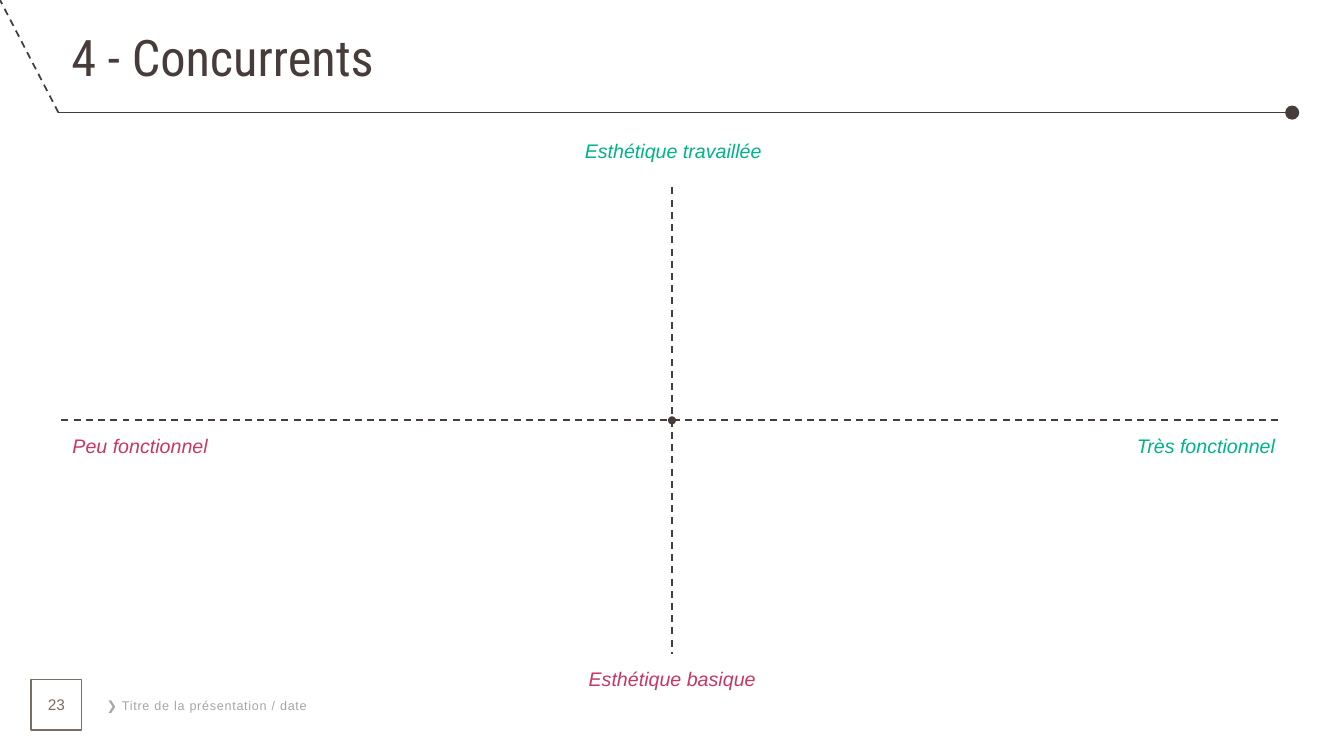
import pptx
import pptx.dml.color
import pptx.enum.dml
import pptx.enum.shapes
import pptx.enum.text
import pptx.oxml.ns
import pptx.util
from lxml import etree

WIDE, HIGH = pptx.util.Inches(13.333), pptx.util.Inches(7.5)
INK = {"dark": "463D3A", "good": "00B388", "poor": "C83764",
       "pale": "A6A6A6", "taupe": "786E64"}
ALIGN = pptx.enum.text.PP_ALIGN
KIND = pptx.enum.shapes.MSO_SHAPE
MID_X, MID_Y = 50, 55.6  # where the axes cross


# Lengths are percentages of the slide's width and height
def col(share):
    return round(WIDE * share / 100)


def row(share):
    return round(HIGH * share / 100)


def place(left, top, width, height):
    return col(left), row(top), col(width), row(height)


def tint(name):
    return pptx.dml.color.RGBColor.from_string(INK[name])


def apply(target, looks):
    for name, value in looks.items():
        setattr(target, name, value)


def stroke(line, ink):
    line.color.rgb = tint(ink)
    line.width = pptx.util.Pt(1.25)


def rule(slide, start, end, dash=True):
    line = slide.shapes.add_connector(
        pptx.enum.shapes.MSO_CONNECTOR.STRAIGHT,
        col(start[0]), row(start[1]), col(end[0]), row(end[1]))
    stroke(line.line, "dark")
    if dash:
        line.line.dash_style = pptx.enum.dml.MSO_LINE.DASH
    etree.SubElement(line._element.spPr, pptx.oxml.ns.qn("a:effectLst"))


def dot(slide, x, y, size):
    wide = col(size)
    disc = slide.shapes.add_shape(
        KIND.OVAL, col(x) - wide // 2, row(y) - wide // 2, wide, wide)
    disc.shadow.inherit = False
    disc.fill.solid()
    disc.fill.fore_color.rgb = tint("dark")
    disc.line.fill.background()


def write(shape, words, ink, size, font="Arial", middle=False, para=None, **looks):
    frame = shape.text_frame
    frame.word_wrap = True
    anchor = pptx.enum.text.MSO_ANCHOR
    frame.vertical_anchor = anchor.MIDDLE if middle else anchor.TOP
    line = frame.paragraphs[0]
    apply(line, para or {})
    run = line.add_run()
    run.text = words
    apply(run.font, {"name": font, "size": pptx.util.Pt(size), **looks})
    run.font.color.rgb = tint(ink)
    return run


def label(slide, words, ink, left, top, width, align):
    box = slide.shapes.add_textbox(*place(left, top, width, 4.53))
    write(box, words, ink, 14, italic=True, para={"alignment": align})


def header(slide):
    bend, end, level = 4.35, 96.15, 14.9
    rule(slide, (end, level), (bend, level), dash=False)
    rule(slide, (bend, level), (0, 0))
    dot(slide, end, level, 1.05)
    box = slide.shapes.add_textbox(*place(4.57, 3.6, 90.53, 9.07))
    write(box, "4 - Concurrents", "dark", 36, "Roboto Condensed", True,
          {"line_spacing": 0.85, "space_after": pptx.util.Pt(9)})


def footer(slide):
    box = slide.shapes.add_textbox(*place(7.2, 91.6, 20.78, 3.33))
    run = write(box, "❯ Titre de la présentation / date", "pale", 9)
    run.font._element.set("spc", "50")
    page = slide.shapes.add_shape(KIND.RECTANGLE, *place(2.32, 89.87, 3.75, 6.67))
    page.shadow.inherit = False
    page.fill.background()
    stroke(page.line, "taupe")
    write(page, "23", "taupe", 11, middle=True, para={"alignment": ALIGN.CENTER})


def main():
    deck = pptx.Presentation()
    apply(deck, {"slide_width": WIDE, "slide_height": HIGH})
    slide = deck.slides.add_slide(deck.slide_layouts[6])
    header(slide)

    # Labels at the ends of the axes
    for item in (
        ("Peu fonctionnel", "poor", 4.65, 56.67, 15.6, ALIGN.LEFT),
        ("Très fonctionnel", "good", 80.92, 56.67, 14.7, ALIGN.RIGHT),
        ("Esthétique basique", "poor", 42.22, 87.6, 15.6, ALIGN.CENTER),
        ("Esthétique travaillée", "good", 42.75, 17.73, 14.7, ALIGN.CENTER),
    ):
        label(slide, *item)
    footer(slide)

    # Axes
    rule(slide, (MID_X, 24.8), (MID_X, 86.53))
    rule(slide, (4.57, MID_Y), (95.4, MID_Y))
    dot(slide, MID_X, MID_Y, 0.6)
    deck.save("out.pptx")


if __name__ == "__main__":
    main()
